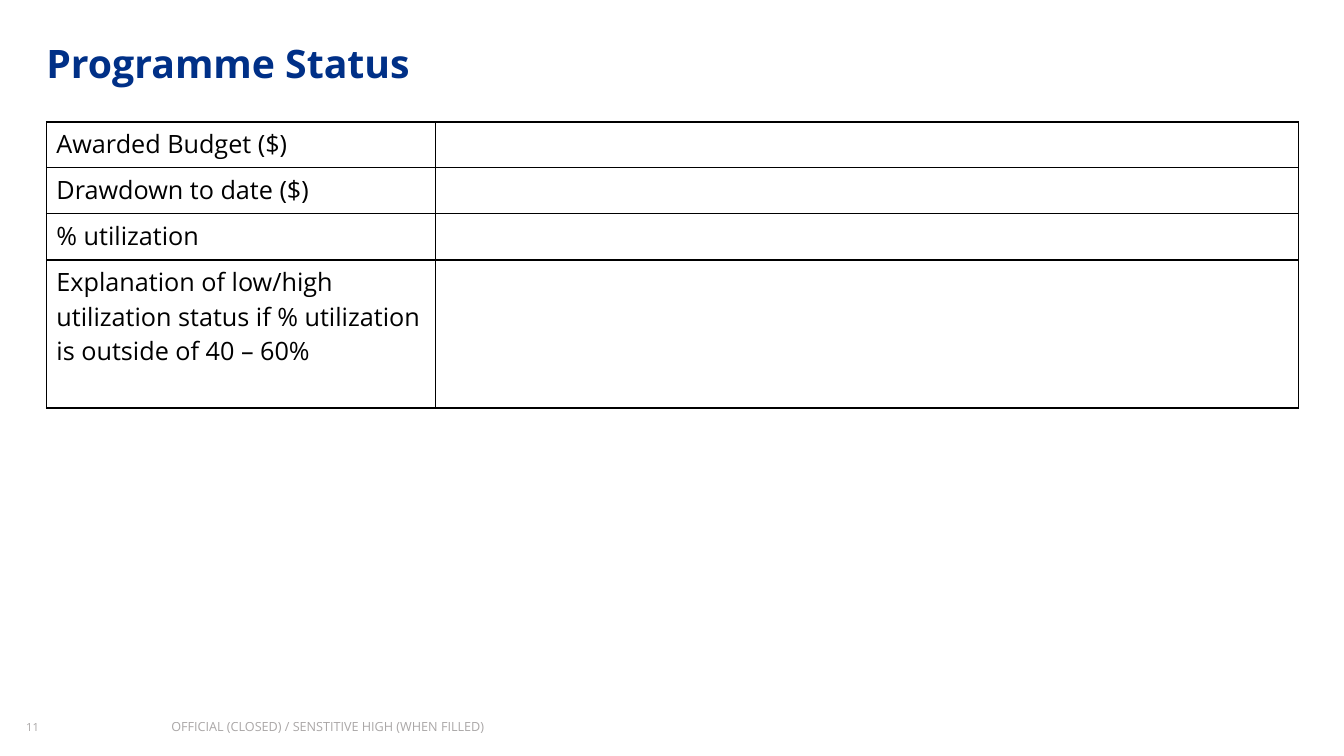
from pptx import Presentation
from pptx.dml.color import RGBColor
from pptx.oxml import parse_xml
from pptx.oxml.ns import nsdecls, qn
from pptx.util import Inches, Pt
from lxml.etree import SubElement

WIDTH, HEIGHT = Inches(13.33), Inches(7.5)
FONT = "Open Sans"
BLUE, BLACK, GREY = "003087", "000000", "767171"
FOOTER_OPACITY = 61
LEFT = 3.45
FOOTER_TOP, FOOTER_HEIGHT = 95.07, 2.53
COLUMN_SHARES = (28.96, 64.21)
STATUS_ROWS = (
    ("Awarded Budget ($)", 6),
    ("Drawdown to date ($)", 6.13),
    ("% utilization", 6.13),
    ("Explanation of low/high utilization status if % utilization "
     "is outside of 40 – 60%", 19.6),
)


def across(share):
    """Turn a percentage of the slide width into a length."""
    return round(WIDTH * share / 100)


def down(share):
    """Turn a percentage of the slide height into a length."""
    return round(HEIGHT * share / 100)


def set_color(target, value, opacity=100):
    target.solid()
    target.fore_color.rgb = RGBColor.from_string(value)
    if opacity < 100:
        color = target._xPr.find(qn("a:solidFill"))[0]
        SubElement(color, qn("a:alpha"), val=str(opacity * 1000))


def write(para, text, size, color, opacity=100, bold=False):
    span = para.add_run()
    span.text = text
    for name, value in {"name": FONT, "size": Pt(size), "bold": bold}.items():
        setattr(span.font, name, value)
    set_color(span.font.fill, color, opacity)


def add_text(page, place, text, size, color, spacing=1.0, **style):
    left, top, width, height = place
    box = page.shapes.add_textbox(across(left), down(top), across(width), down(height))
    frame = box.text_frame
    layout = {"word_wrap": True, "margin_left": 0, "margin_right": 0,
              "margin_top": 0, "margin_bottom": 0}
    for name, value in layout.items():
        setattr(frame, name, value)
    para = frame.paragraphs[0]
    para.line_spacing = spacing
    write(para, text, size, color, **style)


def add_borders(cell, color, points):
    properties = cell._tc.get_or_add_tcPr()
    for side in ("lnL", "lnR", "lnT", "lnB"):
        properties.append(parse_xml(
            f'<a:{side} {nsdecls("a")} w="{Pt(points)}"><a:solidFill>'
            f'<a:srgbClr val="{color}"/></a:solidFill></a:{side}>'))


def add_status_table(page, left, top):
    heights = [height for _, height in STATUS_ROWS]
    table = page.shapes.add_table(
        len(STATUS_ROWS), len(COLUMN_SHARES), across(left), down(top),
        across(sum(COLUMN_SHARES)), down(sum(heights))).table
    table.first_row = table.horz_banding = False
    for column, share in zip(table.columns, COLUMN_SHARES):
        column.width = across(share)
    for row, (label, height) in zip(table.rows, STATUS_ROWS):
        row.height = down(height)
        for cell in row.cells:
            add_borders(cell, BLACK, 1)
            cell.fill.background()
        write(row.cells[0].text_frame.paragraphs[0], label, 18, BLACK)


def main():
    deck = Presentation()
    deck.slide_width, deck.slide_height = WIDTH, HEIGHT
    page = deck.slides.add_slide(deck.slide_layouts[6])
    add_text(page, (1.95, FOOTER_TOP, 5.93, FOOTER_HEIGHT), "11", 8, GREY,
             spacing=1.1, opacity=FOOTER_OPACITY)
    add_text(page, (LEFT, 4.53, 82.67, 6.93), "Programme Status", 28, BLUE,
             spacing=1.1, bold=True)
    add_status_table(page, LEFT, 16.13)
    add_text(page, (12.75, FOOTER_TOP, 40, FOOTER_HEIGHT),
             "OFFICIAL (CLOSED) / SENSTITIVE HIGH (WHEN FILLED)", 9, GREY,
             opacity=FOOTER_OPACITY)
    deck.save("out.pptx")


if __name__ == "__main__":
    main()
